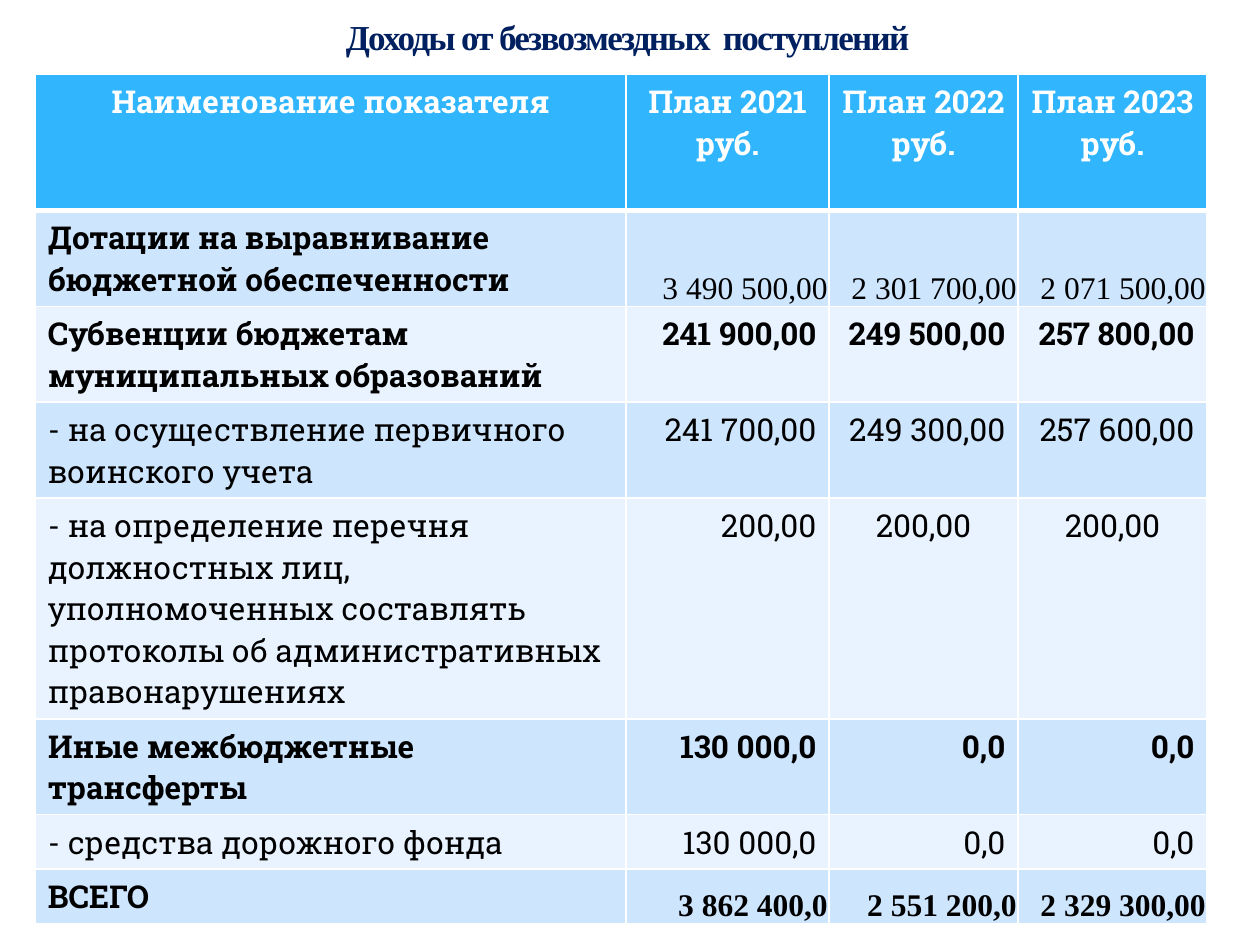
from dataclasses import dataclass

from lxml import etree
from pptx import Presentation
from pptx.dml.color import RGBColor
from pptx.enum.text import MSO_ANCHOR, MSO_AUTO_SIZE, PP_ALIGN
from pptx.oxml.ns import qn
from pptx.util import Inches, Pt

LEFT, CENTER, RIGHT = PP_ALIGN.LEFT, PP_ALIGN.CENTER, PP_ALIGN.RIGHT
TOP, MIDDLE, BOTTOM = MSO_ANCHOR.TOP, MSO_ANCHOR.MIDDLE, MSO_ANCHOR.BOTTOM
NO_AUTOFIT = MSO_AUTO_SIZE.NONE
TITLE_ONLY = 5


@dataclass(frozen=True)
class Theme:
    slab: str = "Roboto Slab"
    serif: str = "Times New Roman"
    title_size: float = 20
    table_size: float = 18
    title: str = "002060"
    outline: str = "AFCCDE"
    header: str = "31B6FD"
    odd_row: str = "CEE5FE"
    even_row: str = "E8F3FF"
    white: str = "FFFFFF"
    ink: str = "000000"


THEME = Theme()
TITLE = "Доходы от безвозмездных  поступлений"
HEADER = ("Наименование показателя", "План 2021 руб.", "План 2022 руб.", "План 2023 руб.")
INCOME = (
    ("Дотации на выравнивание бюджетной обеспеченности",
     "3 490 500,00", "2 301 700,00", "2 071 500,00"),
    ("Субвенции бюджетам муниципальных образований",
     "241 900,00", "249 500,00", "257 800,00"),
    ("- на осуществление первичного воинского учета",
     "241 700,00", "249 300,00", "257 600,00"),
    ("- на определение перечня должностных лиц, уполномоченных составлять "
     "протоколы об административных правонарушениях",
     "200,00", "200,00", "200,00"),
    ("Иные межбюджетные трансферты", "130 000,0", "0,0", "0,0"),
    ("- средства дорожного фонда", "130 000,0", "0,0", "0,0"),
    ("ВСЕГО", "3 862 400,0", "2 551 200,0", "2 329 300,00"),
)
COLUMN_WIDTHS = (4.69, 1.61, 1.5, 1.5)
ROW_HEIGHTS = (1.08, 0.76, 0.76, 0.76, 1.75, 0.76, 0.43, 0.43)
GRANTS_ROW, DUTIES_ROW, TOTAL_ROW = 1, 4, 7


def add_span(para, text, font, size, color, bold):
    span = para.add_run()
    span.text = text
    span.font.name = font
    span.font.size = Pt(size)
    span.font.bold = bold
    span.font.color.rgb = RGBColor.from_string(color)
    return span


def add_line(parent, tag, color, width, position, alpha=100):
    line = etree.Element(qn(tag), w=str(Pt(width)))
    fill = etree.SubElement(line, qn("a:solidFill"))
    shade = etree.SubElement(fill, qn("a:srgbClr"), val=color)
    if alpha < 100:
        etree.SubElement(shade, qn("a:alpha"), val=str(alpha * 1000))
    parent.insert(position, line)


def place_title(page, left, top, width, height):
    box = page.shapes.title
    box.left, box.top, box.width, box.height = left, top, width, height
    frame = box.text_frame
    frame.word_wrap = True
    frame.auto_size = NO_AUTOFIT
    frame.vertical_anchor = MIDDLE
    para = frame.paragraphs[0]
    para.alignment = CENTER
    span = add_span(para, TITLE, THEME.serif, THEME.title_size, THEME.title, True)
    properties = span.font._element
    properties.set("spc", "-100")
    add_line(properties, "a:ln", THEME.outline, 0.25, 0, alpha=25)


def fill_cell(cell, text, row, column):
    is_header = row == 0
    is_serif = column > 0 and row in (GRANTS_ROW, TOTAL_ROW)
    is_detail = INCOME[row - 1][0].startswith("-") and not is_header
    is_bold = not is_detail and not (is_serif and row == GRANTS_ROW)
    if is_header or (row == DUTIES_ROW and column > 1):
        alignment = CENTER
    else:
        alignment = RIGHT if column else LEFT

    if is_header:
        background = THEME.header
    else:
        background = THEME.odd_row if row % 2 else THEME.even_row
    cell.fill.solid()
    cell.fill.fore_color.rgb = RGBColor.from_string(background)
    cell.vertical_anchor = BOTTOM if is_serif else TOP
    if is_serif:
        cell.margin_left = cell.margin_right = cell.margin_top = Inches(0.01)
        cell.margin_bottom = 0

    para = cell.text_frame.paragraphs[0]
    para.alignment = alignment
    add_span(para, text, THEME.serif if is_serif else THEME.slab, THEME.table_size,
             THEME.white if is_header else THEME.ink, is_bold)

    properties = cell._tc.get_or_add_tcPr()
    widths = {"a:lnL": 1, "a:lnR": 1, "a:lnT": 3 if row == 1 else 1,
              "a:lnB": 3 if is_header else 1}
    for position, (tag, width) in enumerate(widths.items()):
        add_line(properties, tag, THEME.white, width, position)


def place_income_table(page, left, top, width, height):
    rows = (HEADER, *INCOME)
    table = page.shapes.add_table(len(rows), len(HEADER), left, top, width, height).table
    for column, size in zip(table.columns, COLUMN_WIDTHS):
        column.width = Inches(size)
    for row, size in zip(table.rows, ROW_HEIGHTS):
        row.height = Inches(size)
    for row, values in enumerate(rows):
        for column, text in enumerate(values):
            fill_cell(table.cell(row, column), text, row, column)


def main():
    deck = Presentation()
    deck.slide_width, deck.slide_height = Inches(10), Inches(7.5)
    page = deck.slides.add_slide(deck.slide_layouts[TITLE_ONLY])
    place_title(page, Inches(1.14), Inches(0), Inches(7.68), Inches(0.58))
    place_income_table(page, Inches(0.28), Inches(0.59),
                       Inches(sum(COLUMN_WIDTHS)), Inches(sum(ROW_HEIGHTS)))
    deck.save("out.pptx")


if __name__ == "__main__":
    main()
